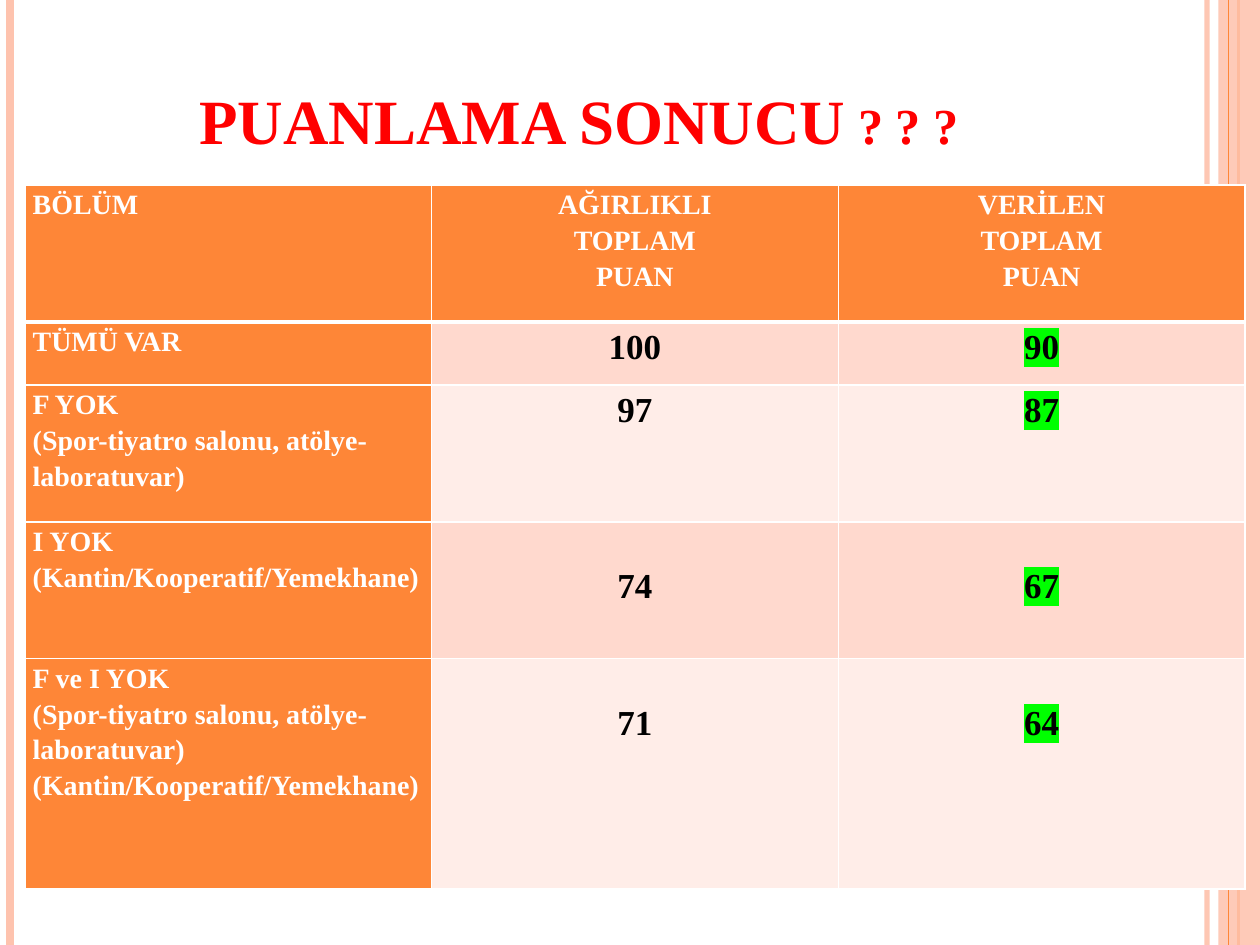
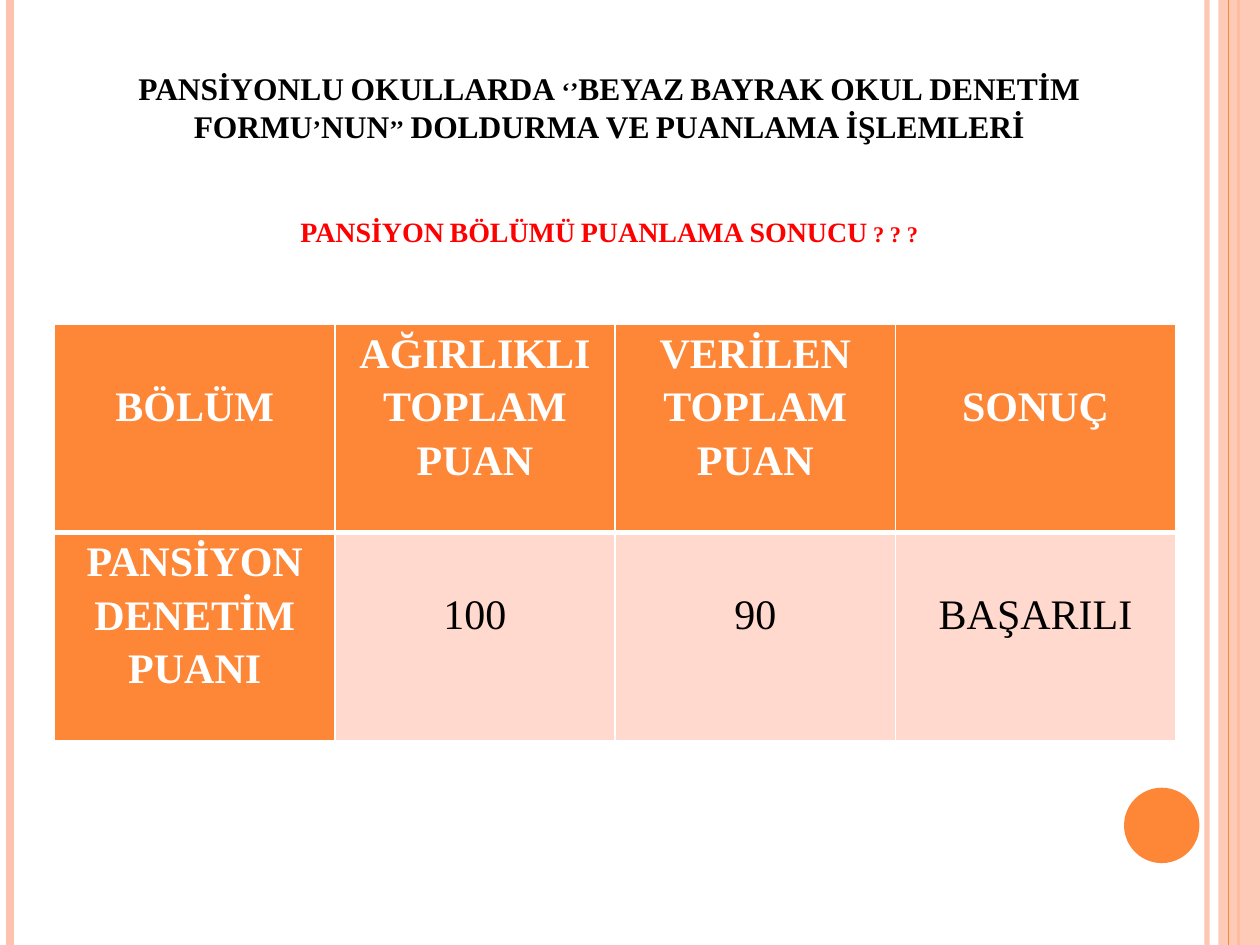
import pptx
import pptx.dml.color
import pptx.enum.shapes
import pptx.enum.text
import pptx.oxml
import pptx.oxml.ns
import pptx.util
from lxml import etree

Cm = pptx.util.Cm
Pt = pptx.util.Pt
RGBColor = pptx.dml.color.RGBColor
Align = pptx.enum.text.PP_ALIGN
Shape = pptx.enum.shapes.MSO_SHAPE
qn = pptx.oxml.ns.qn

ORANGE = RGBColor(0xFE, 0x86, 0x37)
PEACH = RGBColor(0xFE, 0xC3, 0xAE)
BAND_DARK = RGBColor(0xFF, 0xD9, 0xCE)
BAND_LIGHT = RGBColor(0xFF, 0xED, 0xE8)
WHITE = RGBColor(0xFF, 0xFF, 0xFF)
BLACK = RGBColor(0, 0, 0)
RED = RGBColor(0xFF, 0, 0)
GREEN = RGBColor(0, 0xFF, 0)

FONT = "Times New Roman"
SLIDE_WIDTH, SLIDE_HEIGHT = Cm(25.4), Cm(19.05)
CELL_INSET = Cm(0.16)


def set_alpha(element, percent):
    color = element.find(".//" + qn("a:srgbClr"))
    etree.SubElement(color, qn("a:alpha")).set("val", str(percent * 1000))


def add_rule(slide, x, color, width, alpha=None):
    rule = slide.shapes.add_connector(
        pptx.enum.shapes.MSO_CONNECTOR.STRAIGHT, Cm(x), 0, Cm(x), SLIDE_HEIGHT)
    rule.line.color.rgb = color
    rule.line.width = Pt(width)
    properties = rule._element.spPr
    if alpha:
        set_alpha(properties, alpha)
    etree.SubElement(properties, qn("a:effectLst"))


def add_solid(slide, kind, left, top, width, height, color):
    shape = slide.shapes.add_shape(kind, left, top, width, height)
    shape.shadow.inherit = False
    shape.fill.solid()
    shape.fill.fore_color.rgb = color
    shape.line.fill.background()
    return shape


def add_frame(slide):
    add_rule(slide, 24.33, PEACH, 3, 93)
    add_rule(slide, 0.21, PEACH, 4.5)
    add_rule(slide, 24.97, ORANGE, 1.5)
    band = add_solid(slide, Shape.RECTANGLE, Cm(24.56), 0, Cm(0.84), SLIDE_HEIGHT, PEACH)
    set_alpha(band._element.spPr, 87)
    add_rule(slide, 24.77, ORANGE, 0.75)


def style_paragraph(paragraph, size, color, bold=True, align=Align.CENTER):
    paragraph.alignment = align
    paragraph.font.name = FONT
    paragraph.font.size = Pt(size)
    paragraph.font.bold = bold
    paragraph.font.color.rgb = color


def add_title(slide, left, top, width, height, lines):
    box = slide.shapes.add_textbox(Cm(left), Cm(top), Cm(width), Cm(height))
    frame = box.text_frame
    frame.word_wrap = True
    frame.vertical_anchor = pptx.enum.text.MSO_ANCHOR.BOTTOM
    for index, (text, size, color, space_before) in enumerate(lines):
        paragraph = frame.add_paragraph() if index else frame.paragraphs[0]
        run = paragraph.add_run()
        run.text = text
        run._r.get_or_add_rPr().set("cap", "small")
        style_paragraph(paragraph, size, color)
        paragraph.space_before = Pt(space_before)


def set_borders(cell, row):
    properties = cell._tc.get_or_add_tcPr()
    widths = {"L": 1, "R": 1, "T": 3 if row == 1 else 1, "B": 3 if row == 0 else 1}
    for side, width in widths.items():
        line = etree.SubElement(properties, qn("a:ln" + side), w=str(Pt(width)))
        fill = etree.SubElement(line, qn("a:solidFill"))
        etree.SubElement(fill, qn("a:srgbClr"), val=str(WHITE))


def add_grid(slide, left, top, column_width, row_heights, rows):
    columns = len(rows[0])
    table = slide.shapes.add_table(
        len(rows), columns, Cm(left), Cm(top),
        Cm(column_width * columns), Cm(sum(row_heights))).table
    for column in table.columns:
        column.width = Cm(column_width)
    for row, (height, texts) in enumerate(zip(row_heights, rows)):
        table.rows[row].height = Cm(height)
        for column, text in enumerate(texts):
            cell = table.cell(row, column)
            cell.text = text
            cell.margin_left = cell.margin_right = CELL_INSET
            cell.margin_top = cell.margin_bottom = 0
            set_borders(cell, row)
            cell.fill.solid()
            if row == 0 or column == 0:
                cell.fill.fore_color.rgb = ORANGE
            else:
                cell.fill.fore_color.rgb = BAND_DARK if row % 2 else BAND_LIGHT
    return table


def style_cell(cell, size, color, bold=True, align=Align.CENTER, drop=0):
    cell.margin_top = Cm(drop)
    for paragraph in cell.text_frame.paragraphs:
        style_paragraph(paragraph, size, color, bold, align)
        paragraph.line_spacing = 1.15


def highlight(cell):
    for run in cell.text_frame.paragraphs[0].runs:
        mark = etree.SubElement(run._r.get_or_add_rPr(), qn("a:highlight"))
        etree.SubElement(mark, qn("a:srgbClr"), val=str(GREEN))


def build_scores(slide):
    add_frame(slide)
    add_title(slide, 1.3, 0.91, 20.75, 2.39, [("PUANLAMA SONUCU ? ? ?", 36, RED, 0)])
    rows = [
        ("BÖLÜM", "AĞIRLIKLI\nTOPLAM\nPUAN", "VERİLEN\nTOPLAM\nPUAN"),
        ("TÜMÜ VAR", "100", "90"),
        ("F YOK\n(Spor-tiyatro salonu, atölye- laboratuvar)", "97", "87"),
        ("I YOK (Kantin/Kooperatif/Yemekhane)", "74", "67"),
        ("F ve I YOK\n(Spor-tiyatro salonu, atölye- laboratuvar) "
         "(Kantin/Kooperatif/Yemekhane)", "71", "64"),
    ]
    table = add_grid(slide, 0.5, 3.73, 8.2, [2.76, 1.27, 2.76, 2.76, 4.64], rows)
    for row in range(len(rows)):
        style_cell(table.cell(row, 0), 16, WHITE, align=Align.LEFT)
        for column in (1, 2):
            cell = table.cell(row, column)
            if row == 0:
                style_cell(cell, 16, WHITE)
            else:
                style_cell(cell, 20, BLACK, drop=0.8 if row > 2 else 0)
        if row:
            highlight(table.cell(row, 2))


def build_dormitory(slide):
    add_frame(slide)
    add_solid(slide, Shape.OVAL, Cm(22.66), Cm(15.88), Cm(1.52), Cm(1.52), ORANGE)
    add_title(slide, 1.27, 0.76, 22.02, 4.37, [
        ("PANSİYONLU OKULLARDA ‘’BEYAZ BAYRAK OKUL DENETİM FORMU’NUN’’ "
         "DOLDURMA VE PUANLAMA İŞLEMLERİ", 18, BLACK, 0),
        ("PANSİYON BÖLÜMÜ PUANLAMA SONUCU ? ? ?", 16, RED, 40),
    ])
    rows = [
        ("BÖLÜM", "AĞIRLIKLI TOPLAM PUAN", "VERİLEN TOPLAM PUAN", "SONUÇ"),
        ("PANSİYON DENETİM PUANI", "100", "90", "BAŞARILI"),
    ]
    table = add_grid(slide, 1.1, 6.53, 5.65, [4.2, 4.2], rows)
    for row, texts in enumerate(rows):
        for column, text in enumerate(texts):
            heading = row == 0 or column == 0
            style_cell(table.cell(row, column), 24, WHITE if heading else BLACK,
                       bold=heading, drop=0 if " " in text else 1.07)


def main():
    presentation = pptx.Presentation()
    presentation.slide_width = SLIDE_WIDTH
    presentation.slide_height = SLIDE_HEIGHT
    blank = presentation.slide_layouts[6]
    for build in (build_scores, build_dormitory):
        build(presentation.slides.add_slide(blank))
    presentation.save("out.pptx")


if __name__ == "__main__":
    main()
